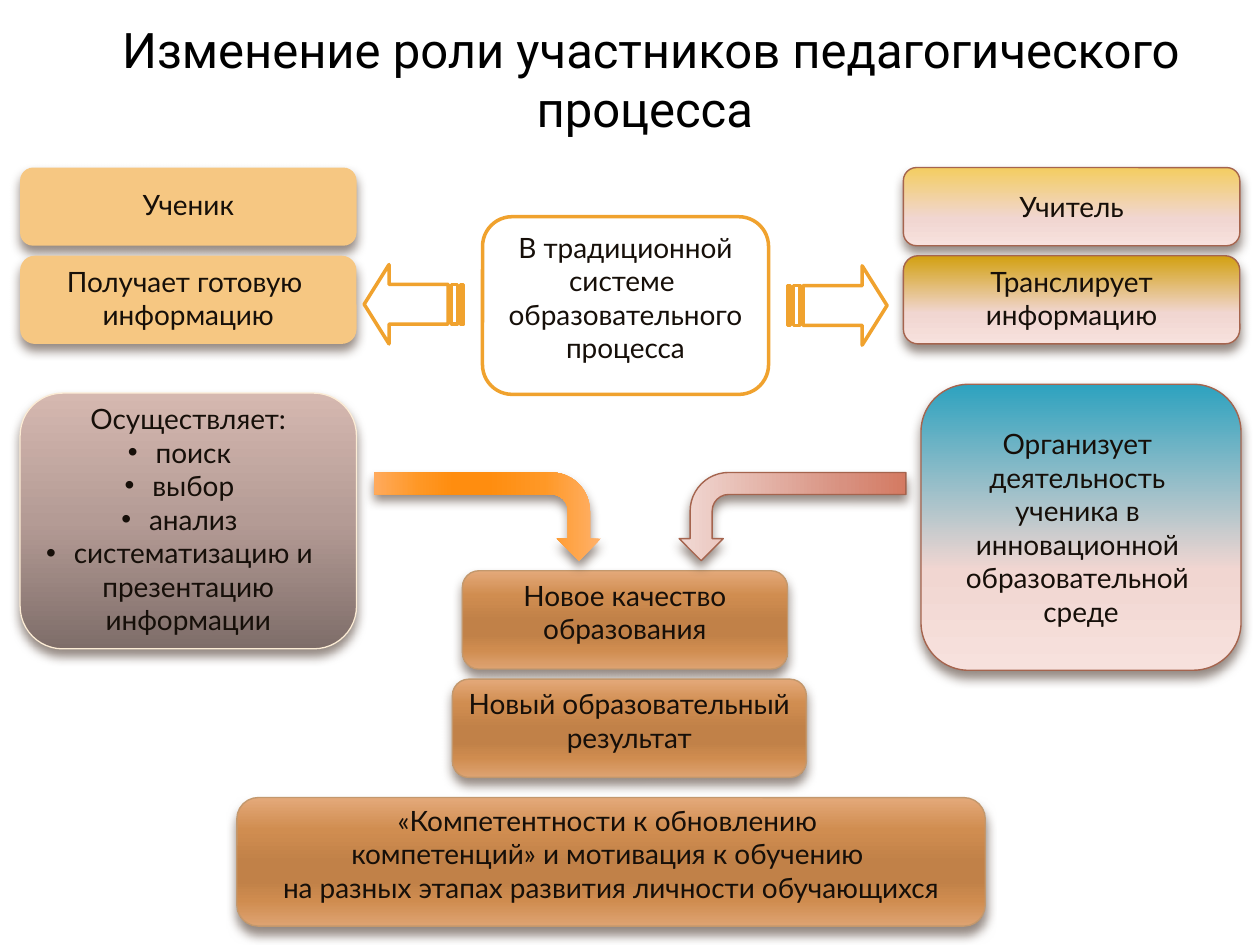
from lxml.etree import SubElement
from pptx import Presentation
from pptx.dml.color import RGBColor
from pptx.enum.shapes import MSO_SHAPE as Shape
from pptx.enum.text import MSO_ANCHOR as Anchor, PP_ALIGN as Align
from pptx.oxml.ns import qn
from pptx.util import Inches, Pt

HEX = {
    "ink": "160F09", "black": "000000", "white": "FFFFFF", "gold": "F0A22E",
    "peach": "F6C782", "cream": "FCECD5", "brick": "A5644E",
    "tan": "C3986D", "shade": "4E3B30",
}
# Gradient stops run from top to bottom: (percent, colour)
BLUSH = [(65, "F1D6D1"), (100, "F7E1DD")]
GRADS = {
    "sea": [(0, "2DA2BF")] + BLUSH,
    "sun": [(0, "F3CD60")] + BLUSH,
    "ochre": [(0, "D2A010")] + BLUSH,
    "mauve": [(0, "D5B8B0"), (50, "B49B95"), (100, "7E6D69")],
    "bronze": [(0, "E4A97A"), (25, "D08D50"), (50, "C18148"),
               (65, "C18148"), (80, "CF8C4F"), (100, "DEA372")],
    "orange": [(0, "FFB16A"), (25, "FF9826"), (50, "FF8D0F"),
               (65, "FF8D0F"), (80, "FF9724"), (100, "FFAA5C")],
    "rose": [(0, "F1D9D4"), (72, "D89180"), (100, "D47A62")],
}
TITLE = "Изменение роли участников педагогического процесса "
DOT = "• "  # marks a bulleted line

# place, lines, fill, line colour, line width, extra bottom inset
BOXES = [
    ((3.83, 1.72, 2.27, 1.41),
     ["В традиционной", "системе ", "образовательного", "процесса"],
     "white", "gold", 2, 0.13),
    ((7.31, 3.05, 2.54, 2.27),
     ["Организует ", "деятельность ", "ученика в ", "инновационной ",
      "образовательной ", "среде"], "sea", "brick", 0.79, 0),
    ((7.17, 1.33, 2.67, 0.62), ["Учитель"], "sun", "brick", 0.79, 0),
    ((7.17, 2.03, 2.67, 0.7), ["Транслирует", "информацию"],
     "ochre", "brick", 0.79, 0.03),
    ((0.16, 1.33, 2.67, 0.62), ["Ученик"], "peach", None, 0, 0.03),
    ((0.16, 2.03, 2.67, 0.7), ["Получает готовую ", "информацию"],
     "peach", None, 0, 0.03),
    ((0.16, 3.12, 2.67, 2.03),
     ["Осуществляет:", DOT + "поиск", DOT + "выбор", DOT + "анализ",
      DOT + "систематизацию и", "презентацию", "информации"],
     "mauve", "cream", 0.75, 0.03),
    ((3.67, 4.53, 2.58, 0.78), ["Новое качество", "образования"],
     "bronze", "tan", 0.79, 0.13),
    ((3.59, 5.39, 2.81, 0.78), ["Новый образовательный", "результат"],
     "bronze", "tan", 0.79, 0.13),
    ((1.88, 6.33, 5.94, 1.02),
     ["«Компетентности к обновлению ",
      "компетенций» и мотивация к обучению ",
      "на разных этапах развития личности обучающихся"],
     "bronze", "tan", 0.79, 0.13),
]
# tail x, direction, top
STRIPED = [(3.68, -1, 2.1), (6.25, 1, 2.11)]
# left, fill, line colour, mirrored
BENT = [(3.52, "orange", None, False), (5.94, "rose", "brick", True)]


def rgb(name):
    return RGBColor.from_string(HEX[name])


def paint(shape, fill, line=None, width=0.79, shadow=True):
    props = shape.element.spPr
    if fill in GRADS:
        shape.fill.gradient()
        shape.fill.gradient_angle = 270
        stops = props.find(qn("a:gradFill")).find(qn("a:gsLst"))
        for old in list(stops):
            stops.remove(old)
        for pos, color in GRADS[fill]:
            stop = SubElement(stops, qn("a:gs"), pos=str(pos * 1000))
            SubElement(stop, qn("a:srgbClr"), val=color)
    else:
        shape.fill.solid()
        shape.fill.fore_color.rgb = rgb(fill)
    if line:
        shape.line.color.rgb = rgb(line)
        shape.line.width = Pt(width)
    else:
        shape.line.fill.background()
    shape.shadow.inherit = False
    if shadow:
        glow = SubElement(
            props.find(qn("a:effectLst")), qn("a:outerShdw"),
            blurRad=str(Pt(6)), dist=str(Pt(4)), dir="5400000",
            rotWithShape="0")
        color = SubElement(glow, qn("a:srgbClr"), val=HEX["shade"])
        SubElement(color, qn("a:alpha"), val="60000")


def indent(para, dotted):
    """Set the margins, and the bullet of a dotted line."""
    left, right = (0.22, 0.14) if dotted else (0, 0)
    props = para._p.get_or_add_pPr()
    props.set("marL", str(Inches(left)))
    props.set("marR", str(Inches(right)))
    props.set("indent", str(Inches(-left)))
    if dotted:
        SubElement(props, qn("a:buFont"), typeface="Arial")
        SubElement(props, qn("a:buChar"), char=DOT.strip())


def write(shape, lines, size=16, font="Lato", color="ink", wrap=False, drop=0):
    frame = shape.text_frame
    frame.word_wrap = wrap
    frame.vertical_anchor = Anchor.MIDDLE
    frame.margin_bottom = Inches(0.05 + drop)
    for i, line in enumerate(lines):
        para = frame.add_paragraph() if i else frame.paragraphs[0]
        para.alignment = Align.CENTER
        indent(para, line.startswith(DOT))
        run = para.add_run()
        run.text = line.removeprefix(DOT)
        run.font.size = Pt(size)
        run.font.name = font
        run.font.color.rgb = rgb(color)


def striped(shapes, tail, way, top, wide=0.79, high=0.63):
    """Draw a block arrow with two stripes at its tail."""
    def bar(a, b):
        return [(a, 0.25), (b, 0.25), (b, 0.75), (a, 0.75)]

    head = [(0.75, 0), (0.75, 0.25), (5 / 32, 0.25), (5 / 32, 0.75),
            (0.75, 0.75), (0.75, 1), (1, 0.5)]
    paths = [[(Inches(tail + way * wide * x), Inches(top + high * y))
              for x, y in path]
             for path in (head, bar(1 / 16, 1 / 8), bar(0, 1 / 32))]
    pen = shapes.build_freeform(*paths[0][0])
    pen.add_line_segments(paths[0][1:], close=True)
    for path in paths[1:]:
        pen.move_to(*path[0])
        pen.add_line_segments(path[1:], close=True)
    paint(pen.convert_to_shape(), "white", "gold", 2, shadow=False)


def main():
    deck = Presentation()
    deck.slide_width, deck.slide_height = Inches(10), Inches(7.5)
    shapes = deck.slides.add_slide(deck.slide_layouts[6]).shapes

    title = shapes.add_textbox(*map(Inches, (0.62, 0, 9.09, 1.25)))
    write(title, [TITLE], size=28, font="Roboto", color="black", wrap=True)

    for place, lines, fill, line, width, drop in BOXES:
        box = shapes.add_shape(Shape.ROUNDED_RECTANGLE, *map(Inches, place))
        paint(box, fill, line, width, shadow=fill != "white")
        write(box, lines, drop=drop)

    for tail, way, top in STRIPED:
        striped(shapes, tail, way, top)

    for left, fill, line, mirror in BENT:
        arrow = shapes.add_shape(
            Shape.BENT_ARROW, *map(Inches, (left, 3.2, 0.7, 1.8)))
        arrow.rotation = 90
        if mirror:
            arrow.element.spPr.find(qn("a:xfrm")).set("flipV", "1")
        paint(arrow, fill, line)

    deck.save("out.pptx")


if __name__ == "__main__":
    main()
